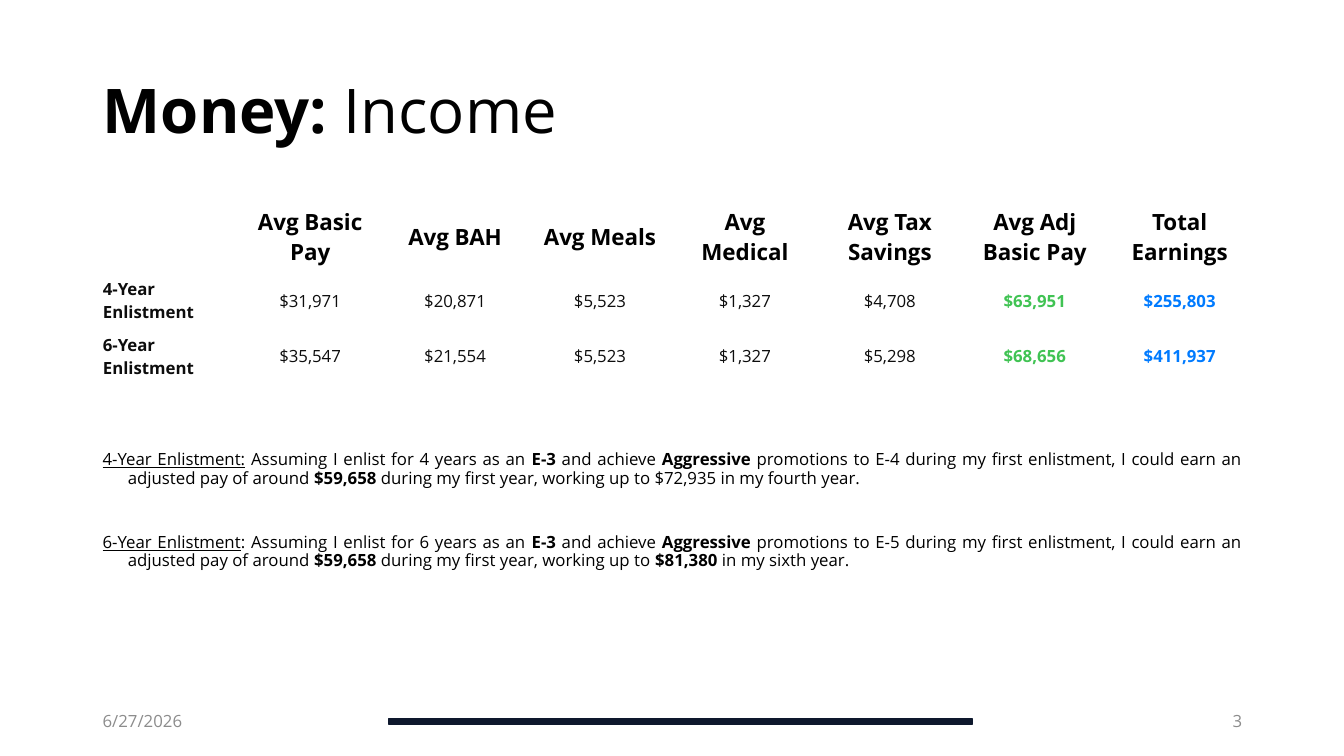
from pptx import Presentation
from pptx.dml.color import RGBColor
from pptx.enum.shapes import MSO_SHAPE
from pptx.enum.text import MSO_ANCHOR, PP_ALIGN
from pptx.util import Inches, Pt

RECT = MSO_SHAPE.RECTANGLE
MIDDLE, TOP = MSO_ANCHOR.MIDDLE, MSO_ANCHOR.TOP
LEFT, CENTER = PP_ALIGN.LEFT, PP_ALIGN.CENTER
RIGHT, JUSTIFY = PP_ALIGN.RIGHT, PP_ALIGN.JUSTIFY

COLORS = {"black": "000000", "ink": "0D0D0D", "green": "40C353",
          "blue": "007BFF", "gray": "8C8C8C", "navy": "0E182D",
          "white": "FFFFFF"}
EDGE, WIDTH = 0.92, 11.5


def style(par, size, color="black", bold=None, align=LEFT):
    par.alignment = align
    font = par.font
    font.name, font.size, font.bold = "Open Sans", Pt(size), bold
    font.color.rgb = RGBColor.from_string(COLORS[color])


def add_box(left, top, width, height, anchor):
    box = slide.shapes.add_textbox(Inches(left), Inches(top),
                                   Inches(width), Inches(height))
    box.text_frame.word_wrap = True
    box.text_frame.vertical_anchor = anchor
    return box.text_frame


deck = Presentation()
deck.slide_width, deck.slide_height = Inches(13.33), Inches(7.5)
slide = deck.slides.add_slide(deck.slide_layouts[5])

# Footer bar
bar = slide.shapes.add_shape(RECT, Inches(3.86), Inches(7.13),
                             Inches(5.78), Inches(0.06))
bar.shadow.inherit = False
bar.fill.solid()
bar.fill.fore_color.rgb = RGBColor.from_string(COLORS["navy"])
bar.line.color.rgb = RGBColor.from_string(COLORS["navy"])
bar.line.width = Pt(1)

# Title
title = slide.shapes.title
title.left, title.top = Inches(EDGE), Inches(0.4)
title.width, title.height = Inches(WIDTH), Inches(1.45)
title.text_frame.vertical_anchor = MIDDLE
head = title.text_frame.paragraphs[0]
style(head, 44)
head.line_spacing = 0.9
for text, bold in (("Money:", True), (" Income", False)):
    run = head.add_run()
    run.text, run.font.bold = text, bold

# Income table
ROWS = [
    ["", "Avg Basic Pay", "Avg BAH", "Avg Meals", "Avg Medical",
     "Avg Tax Savings", "Avg Adj Basic Pay", "Total Earnings"],
    ["4-Year Enlistment", "$31,971", "$20,871", "$5,523", "$1,327",
     "$4,708", "$63,951", "$255,803"],
    ["6-Year Enlistment", "$35,547", "$21,554", "$5,523", "$1,327",
     "$5,298", "$68,656", "$411,937"],
]
HEIGHTS = [0.7, 0.55, 0.55]
ACCENTS = {6: "green", 7: "blue"}
table = slide.shapes.add_table(
    len(ROWS), len(ROWS[0]), Inches(EDGE), Inches(2),
    Inches(WIDTH), Inches(sum(HEIGHTS))).table
table.first_row = table.horz_banding = False
for r, row in enumerate(ROWS):
    table.rows[r].height = Inches(HEIGHTS[r])
    for c, text in enumerate(row):
        cell = table.cell(r, c)
        cell.fill.solid()
        cell.fill.fore_color.rgb = RGBColor.from_string(COLORS["white"])
        cell.vertical_anchor = MIDDLE
        cell.text = text
        par = cell.text_frame.paragraphs[0]
        if r == 0:
            style(par, 16, bold=True, align=CENTER)
        else:
            style(par, 12, ACCENTS.get(c, "ink"), c == 0 or c in ACCENTS,
                  CENTER if c else LEFT)

# Notes: each run is text plus "u" for underline or "b" for bold
NOTES = [
    [("4-Year Enlistment:", "u"),
     (" Assuming I enlist for 4 years as an ", ""),
     ("E-3", "b"), (" and achieve ", ""), ("Aggressive", "b"),
     (" promotions to E-4 during my first enlistment, I could earn an "
      "adjusted pay of around ", ""),
     ("$59,658", "b"),
     (" during my first year, working up to $72,935 in my fourth year.", "")],
    [("6-Year Enlistment", "u"),
     (": Assuming I enlist for 6 years as an ", ""),
     ("E-3", "b"), (" and achieve ", ""), ("Aggressive", "b"),
     (" promotions to E-5 during my first enlistment, I could earn an "
      "adjusted pay of around ", ""),
     ("$59,658", "b"), (" during my first year, working up to ", ""),
     ("$81,380", "b"), (" in my sixth year.", "")],
]
frame = add_box(EDGE, 4.43, WIDTH, 2.04, TOP)
for i, note in enumerate(NOTES):
    par = frame.add_paragraph() if i else frame.paragraphs[0]
    props = par._p.get_or_add_pPr()
    props.set("marL", str(Inches(0.25)))
    props.set("indent", str(Inches(-0.25)))
    style(par, 12, align=JUSTIFY)
    par.line_spacing = 0.9
    if i:
        par.space_before = Pt(33)
    for text, mark in note:
        run = par.add_run()
        run.text = text
        if mark == "b":
            run.font.bold = True
        elif mark == "u":
            run.font.underline = True

# Date and slide number
for left, text, align in ((EDGE, "6/27/2026", LEFT),
                          (EDGE + WIDTH - 3, "3", RIGHT)):
    par = add_box(left, 6.95, 3, 0.4, MIDDLE).paragraphs[0]
    par.text = text
    style(par, 12, "gray", align=align)

deck.save("out.pptx")
